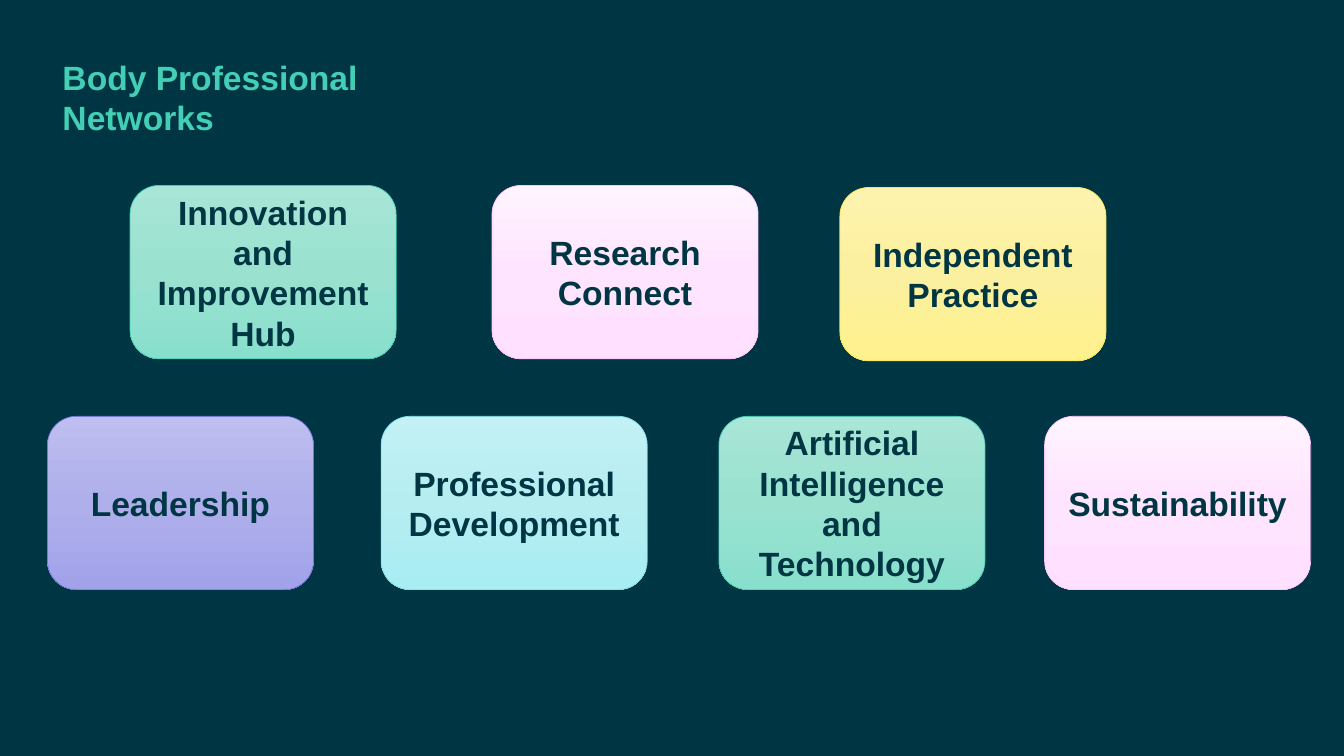
from copy import deepcopy

from pptx import Presentation
from pptx.dml.color import RGBColor
from pptx.enum.shapes import MSO_SHAPE
from pptx.enum.text import MSO_ANCHOR, MSO_AUTO_SIZE, PP_ALIGN
from pptx.oxml.ns import qn
from pptx.util import Inches, Pt

# Content: each row holds (text, tone, left, top) in percent of the slide
TITLE = ["Body Professional", "Networks"]
ROWS = [
    [
        ("Innovation and Improvement Hub", "green", 9.68, 24.53),
        ("Research Connect", "pink", 36.61, 24.53),
        ("Independent Practice", "yellow", 62.49, 24.8),
    ],
    [
        ("Leadership", "purple", 3.53, 55.07),
        ("Professional Development", "blue", 28.36, 55.07),
        ("Artificial Intelligence and Technology", "green", 53.49, 55.07),
        ("Sustainability", "pink", 77.72, 55.07),
    ],
]
CARD = (19.8, 22.93)
HEAD = (3.9, 6.8, 24.76, 16.8)

# Colours: three gradient stops, then the outline
COLORS = {"navy": "003643", "teal": "43CFB5"}
TONES = {
    "green": ("A8E6D7", "9AE1D0", "88E0CC", "43CFB5"),
    "pink": ("FFF4FF", "FFE4FF", "FFE0FF", "FFC2FF"),
    "yellow": ("FDF3AE", "FBF09F", "FFF18D", "F7E64D"),
    "purple": ("BEBEF0", "AFAFEB", "A2A2EB", "7575DF"),
    "blue": ("C3F1F5", "B5EDF1", "A8EDF2", "7EE1E8"),
}

deck = Presentation()
deck.slide_width, deck.slide_height = Inches(13.33), Inches(7.5)


def scale(left, top, width, height):
    """Turn percent of the slide into lengths."""
    wide, high = deck.slide_width / 100, deck.slide_height / 100
    return [int(n) for n in (left * wide, top * high, width * wide, height * high)]


def write(shape, lines, color="navy", align=PP_ALIGN.CENTER, anchor=MSO_ANCHOR.MIDDLE):
    frame = shape.text_frame
    frame.text = "\n".join(lines)
    frame.word_wrap = True
    frame.auto_size = MSO_AUTO_SIZE.NONE
    frame.vertical_anchor = anchor
    for para in frame.paragraphs:
        para.alignment = align
        font = para.runs[0].font
        font.name, font.size, font.bold = "Arial", Pt(24), True
        font.color.rgb = RGBColor.from_string(COLORS[color])


def paint(shape, tone):
    *shades, edge = TONES[tone]
    shape.shadow.inherit = False
    shape.line.color.rgb = RGBColor.from_string(edge)
    shape.line.width = Pt(0.5)
    shape.fill.gradient()
    shape.fill.gradient_angle = 270
    # Add a middle stop
    stops = shape.element.spPr.find(qn("a:gradFill")).find(qn("a:gsLst"))
    stops.insert(1, deepcopy(stops[0]))
    for i, (stop, shade) in enumerate(zip(shape.fill.gradient_stops, shades)):
        stop.position = i / 2
        stop.color.rgb = RGBColor.from_string(shade)


# Slide and title
slide = deck.slides.add_slide(deck.slide_layouts[5])
slide.background.fill.solid()
slide.background.fill.fore_color.rgb = RGBColor.from_string(COLORS["navy"])
title = slide.shapes.title
title.left, title.top, title.width, title.height = scale(*HEAD)
write(title, TITLE, color="teal", align=PP_ALIGN.LEFT, anchor=MSO_ANCHOR.TOP)

# Network cards
for row in ROWS:
    for text, tone, left, top in row:
        card = slide.shapes.add_shape(
            MSO_SHAPE.FLOWCHART_ALTERNATE_PROCESS, *scale(left, top, *CARD))
        paint(card, tone)
        write(card, [text])

deck.save("out.pptx")
